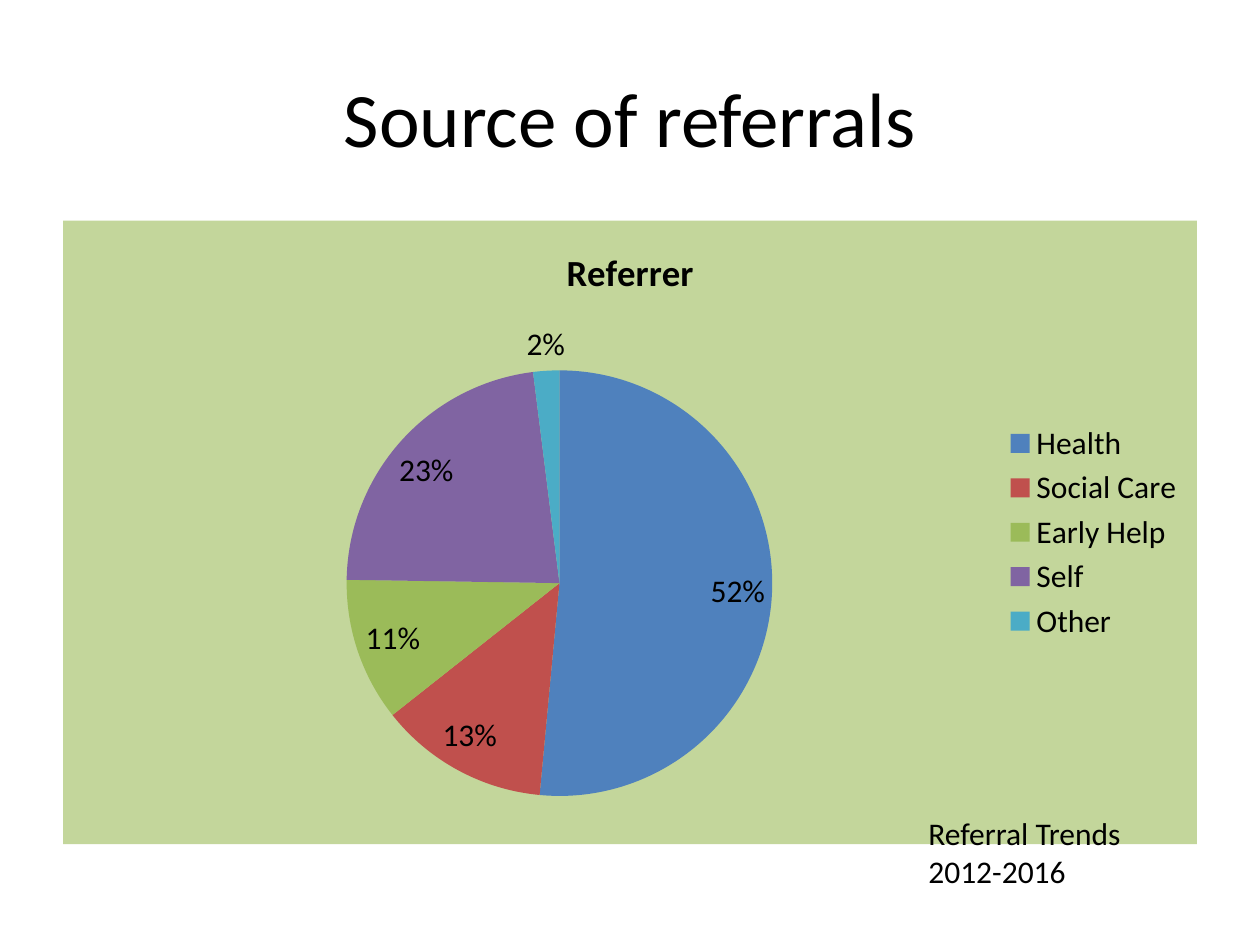
import dataclasses

import pptx
import pptx.chart.data
import pptx.dml.color
import pptx.enum.chart
import pptx.enum.text
import pptx.oxml
import pptx.oxml.ns
import pptx.util

Inches = pptx.util.Inches
FONT = "Calibri"
BLACK = "000000"
CHART_FILL = "C3D69B"


@dataclasses.dataclass(frozen=True)
class Caption:
    lines: tuple[str, ...]
    box: tuple[float, float, float, float]
    size: int
    alignment: pptx.enum.text.PP_ALIGN
    anchor: pptx.enum.text.MSO_ANCHOR


@dataclasses.dataclass(frozen=True)
class Referrer:
    name: str
    percent: int
    color: str


CAPTIONS = (
    Caption(("Source of referrals",), (0.5, 0.3, 9, 1.25), 44,
            pptx.enum.text.PP_ALIGN.CENTER, pptx.enum.text.MSO_ANCHOR.MIDDLE),
    Caption(("Referral Trends", "2012-2016"), (7.27, 6.41, 2.11, 0.71), 18,
            pptx.enum.text.PP_ALIGN.LEFT, pptx.enum.text.MSO_ANCHOR.TOP),
)
REFERRERS = (
    Referrer("Health", 52, "4F81BD"),
    Referrer("Social Care", 13, "C0504D"),
    Referrer("Early Help", 11, "9BBB59"),
    Referrer("Self", 23, "8064A2"),
    Referrer("Other", 2, "4BACC6"),
)


def rgb(color: str) -> pptx.dml.color.RGBColor:
    return pptx.dml.color.RGBColor.from_string(color)


def set_attributes(target, values: dict) -> None:
    for name, value in values.items():
        setattr(target, name, value)


def format_font(font, size: int, bold: bool = False) -> None:
    set_attributes(font, {"name": FONT, "size": pptx.util.Pt(size), "bold": bold})
    font.color.rgb = rgb(BLACK)


def add_caption(slide, caption: Caption) -> None:
    shape = slide.shapes.add_textbox(*map(Inches, caption.box))
    frame = shape.text_frame
    frame.text = "\n".join(caption.lines)
    set_attributes(frame, {"word_wrap": True, "vertical_anchor": caption.anchor})
    for paragraph in frame.paragraphs:
        paragraph.alignment = caption.alignment
        format_font(paragraph.runs[0].font, caption.size)


def fill_chart_area(chart, color: str) -> None:
    properties = pptx.oxml.parse_xml(
        f'<c:spPr {pptx.oxml.ns.nsdecls("c", "a")}>'
        f'<a:solidFill><a:srgbClr val="{color}"/></a:solidFill>'
        "<a:ln><a:noFill/></a:ln></c:spPr>"
    )
    chart.element.find(pptx.oxml.ns.qn("c:chart")).addnext(properties)


def add_referrer_chart(slide, referrers: tuple[Referrer, ...]) -> None:
    data = pptx.chart.data.CategoryChartData()
    data.categories = [referrer.name for referrer in referrers]
    data.add_series("Referrer", [referrer.percent for referrer in referrers])
    chart = slide.shapes.add_chart(
        pptx.enum.chart.XL_CHART_TYPE.PIE, *map(Inches, (0.5, 1.75, 9, 4.95)), data
    ).chart
    format_font(chart.font, 18)
    fill_chart_area(chart, CHART_FILL)
    set_attributes(chart, {"has_title": True, "has_legend": True})
    chart.chart_title.text_frame.text = "Referrer"
    title = chart.chart_title.text_frame.paragraphs[0]
    format_font(title.runs[0].font, 21, bold=True)
    set_attributes(chart.legend, {
        "position": pptx.enum.chart.XL_LEGEND_POSITION.RIGHT,
        "include_in_layout": False,
    })
    plot = chart.plots[0]
    set_attributes(plot, {"vary_by_categories": True, "has_data_labels": True})
    set_attributes(plot.data_labels, {
        "show_value": True,
        "show_percentage": False,
        "number_format": '0"%"',
        "number_format_is_linked": False,
        "position": pptx.enum.chart.XL_LABEL_POSITION.BEST_FIT,
    })
    for index, referrer in enumerate(referrers):
        fill = plot.series[0].points[index].format.fill
        fill.solid()
        fill.fore_color.rgb = rgb(referrer.color)


def main() -> None:
    presentation = pptx.Presentation()
    set_attributes(presentation, {"slide_width": Inches(10), "slide_height": Inches(7.5)})
    slide = presentation.slides.add_slide(presentation.slide_layouts[6])
    add_referrer_chart(slide, REFERRERS)
    for caption in CAPTIONS:
        add_caption(slide, caption)
    presentation.save("out.pptx")


if __name__ == "__main__":
    main()
